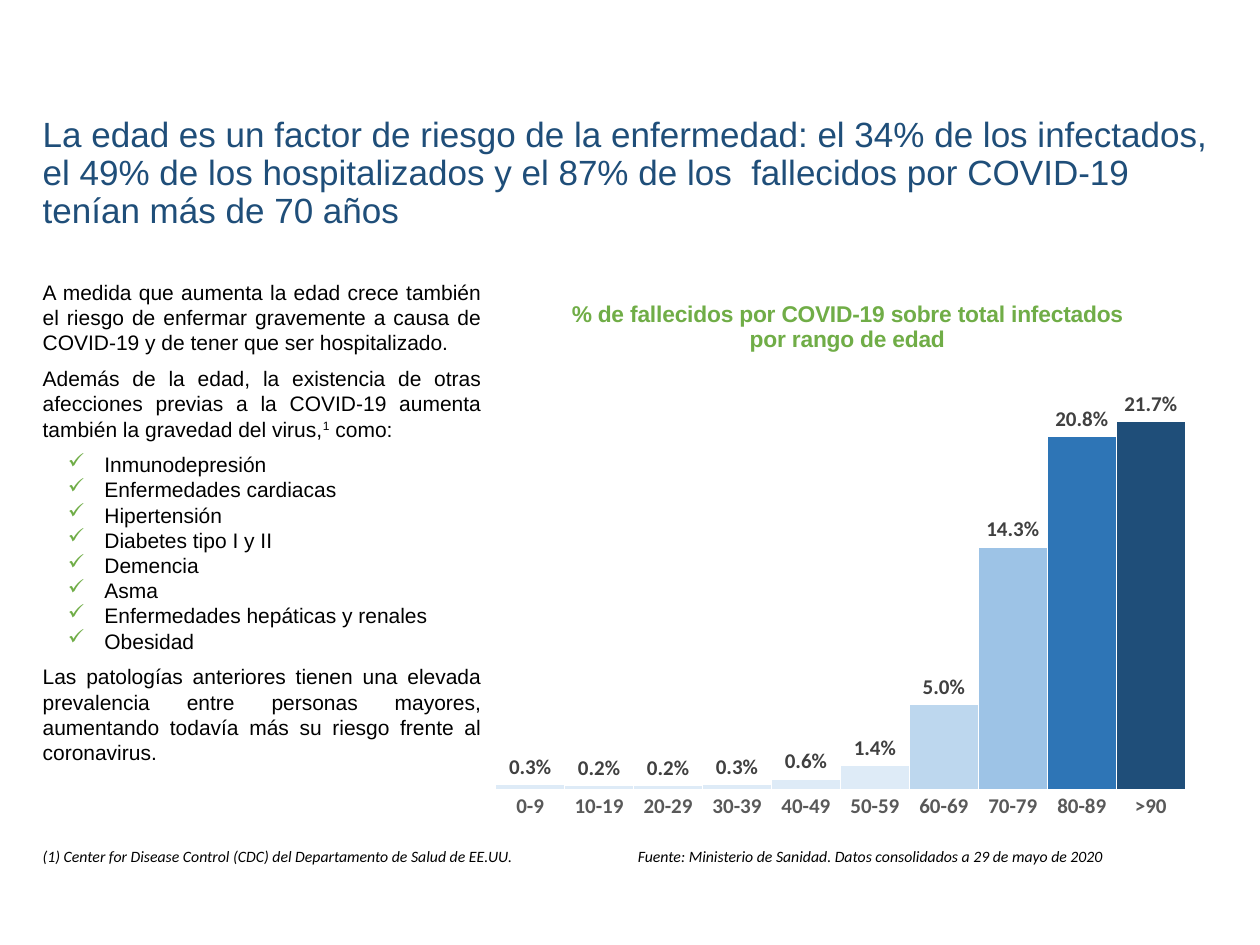
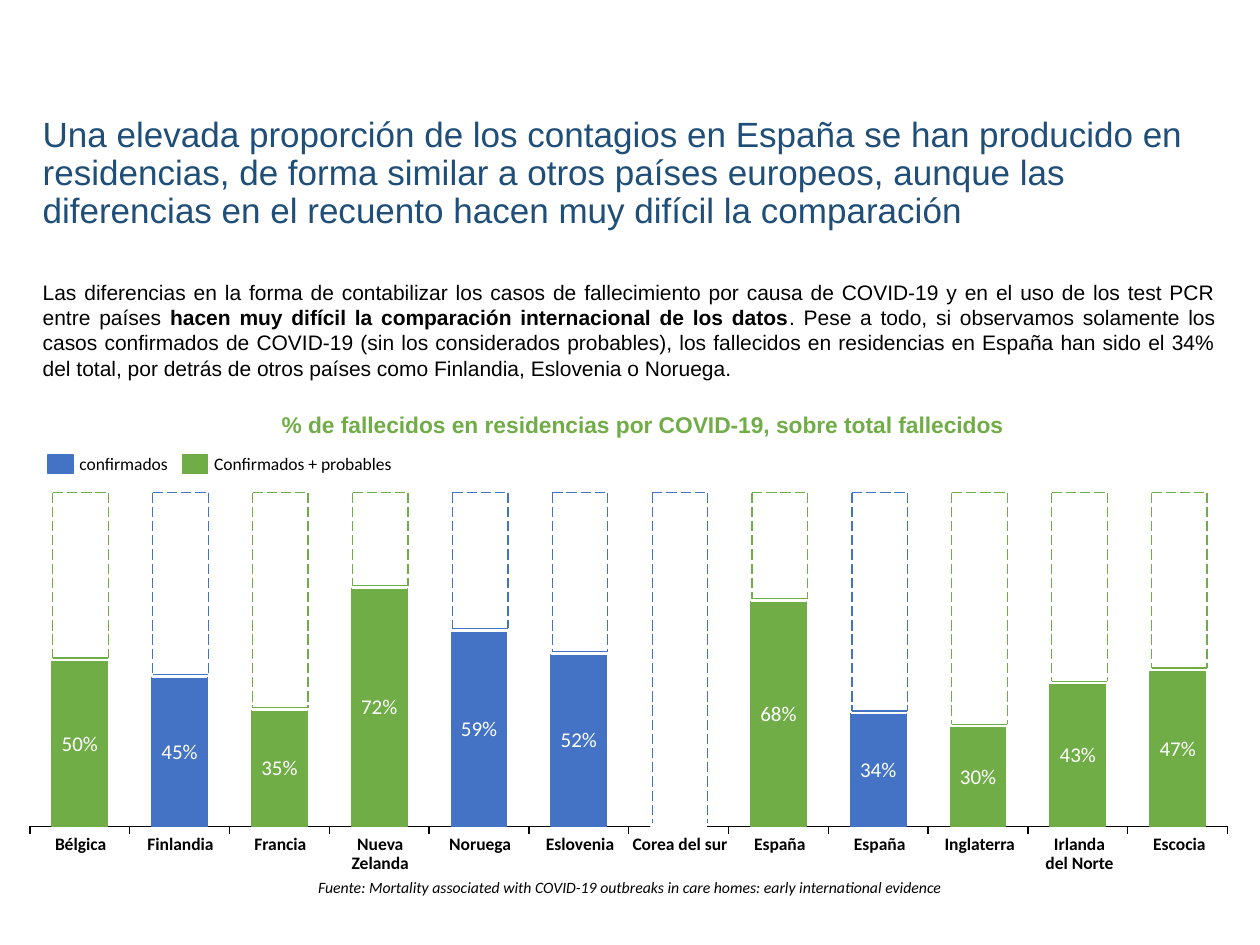
from lxml.etree import SubElement
from pptx import Presentation
from pptx.chart.data import CategoryChartData
from pptx.dml.color import RGBColor
from pptx.enum.chart import XL_CHART_TYPE as ChartType
from pptx.enum.chart import XL_LABEL_POSITION as LabelPosition
from pptx.enum.chart import XL_TICK_LABEL_POSITION as TickLabels
from pptx.enum.chart import XL_TICK_MARK as TickMark
from pptx.enum.dml import MSO_LINE as LineDash
from pptx.enum.shapes import MSO_CONNECTOR as Connector
from pptx.enum.shapes import MSO_SHAPE as Preset
from pptx.enum.text import MSO_ANCHOR as Anchor
from pptx.enum.text import PP_ALIGN as Align
from pptx.oxml import parse_xml
from pptx.oxml.ns import nsdecls, qn
from pptx.util import Pt

BLACK = RGBColor(0x00, 0x00, 0x00)
WHITE = RGBColor(0xFF, 0xFF, 0xFF)
GREEN = RGBColor(0x70, 0xAD, 0x47)
BLUE = RGBColor(0x44, 0x72, 0xC4)
NAVY = RGBColor(0x1F, 0x4E, 0x79)
MID_BLUE = RGBColor(0x2E, 0x75, 0xB6)
SKY = RGBColor(0x9D, 0xC3, 0xE6)
PALE_SKY = RGBColor(0xBD, 0xD7, 0xEE)
ICE = RGBColor(0xDE, 0xEB, 0xF7)
LABEL_GRAY = RGBColor(0x40, 0x40, 0x40)
AXIS_GRAY = RGBColor(0x59, 0x59, 0x59)
RULE_GRAY = RGBColor(0xD9, 0xD9, 0xD9)

TITLE = {"name": "Arial", "size": Pt(20), "color": NAVY}
BODY = {"name": "Arial", "size": Pt(12), "color": BLACK}
HEADING = {"name": "Arial", "size": Pt(13), "bold": True, "color": GREEN}
SOURCE = {"name": "Calibri", "size": Pt(9), "italic": True, "color": BLACK}
LEGEND = {"name": "Calibri", "size": Pt(10), "color": BLACK}
COUNTRY = {**LEGEND, "bold": True}
AGE_VALUE = {"name": "Calibri", "size": Pt(12), "bold": True, "color": LABEL_GRAY}
AGE_RANGE = {**AGE_VALUE, "color": AXIS_GRAY}
CARE_VALUE = {"name": "Calibri", "size": Pt(12), "color": WHITE}
TIGHT = {"line_spacing": 0.9}
CENTERED = {"alignment": Align.CENTER}
JUSTIFIED = {"alignment": Align.JUSTIFY, "space_after": Pt(6)}

LEFT, WIDTH = 17.3, 684.7
AGES = ["0-9", "10-19", "20-29", "30-39", "40-49", "50-59", "60-69", "70-79", "80-89", ">90"]
DEATH_RATES = [0.003, 0.002, 0.002, 0.003, 0.006, 0.014, 0.05, 0.143, 0.208, 0.217]
AGE_COLORS = [ICE] * 6 + [PALE_SKY, SKY, MID_BLUE, NAVY]
CONDITIONS = [
    "Inmunodepresión", "Enfermedades cardiacas", "Hipertensión", "Diabetes tipo I y II",
    "Demencia", "Asma", "Enfermedades hepáticas y renales", "Obesidad",
]
COUNTRIES = [
    ("Bélgica", 50, GREEN), ("Finlandia", 45, BLUE), ("Francia", 35, GREEN),
    ("Nueva Zelanda", 72, GREEN), ("Noruega", 59, BLUE), ("Eslovenia", 52, BLUE),
    ("Corea del sur", None, BLUE), ("España", 68, GREEN), ("España", 34, BLUE),
    ("Inglaterra", 30, GREEN), ("Irlanda del Norte", 43, GREEN), ("Escocia", 47, GREEN),
]
TWO_LINE_NAMES = {"Nueva Zelanda", "Irlanda del Norte"}
COLUMN_LEFT, COLUMN_STEP, COLUMN_WIDTH = 30.2, 57.08, 31.7
FRAME_TOP, FRAME_BASE, FULL_HEIGHT = 281.5, 470.4, 188.6


def set_values(target, values):
    for name, value in values.items():
        if name == "color":
            target.color.rgb = value
        else:
            setattr(target, name, value)


def add_run(paragraph, text, font, superscript=False):
    run = paragraph.add_run()
    run.text = text
    set_values(run.font, font)
    if superscript:
        run._r.get_or_add_rPr().set("baseline", "30000")


def add_check(paragraph):
    properties = paragraph._p.get_or_add_pPr()
    properties.set("lvl", "1")
    properties.set("marL", str(Pt(35.3)))
    properties.set("indent", str(Pt(-20.9)))
    color = SubElement(properties, qn("a:buClr"))
    SubElement(color, qn("a:srgbClr")).set("val", str(GREEN))
    SubElement(properties, qn("a:buChar")).set("char", "✓")


def add_text_frame(slide, left, top, width, height, **frame_format):
    box = slide.shapes.add_textbox(Pt(left), Pt(top), Pt(width), Pt(height))
    set_values(box.text_frame, {"word_wrap": True, **frame_format})
    return box.text_frame


def add_text(slide, area, text, font, paragraph_format, **frame_format):
    frame = add_text_frame(slide, *area, **frame_format)
    paragraph = frame.paragraphs[0]
    set_values(paragraph, paragraph_format)
    add_run(paragraph, text, font)


def add_label(slide, area, text, font, paragraph_format, **frame_format):
    margins = {f"margin_{side}": 0 for side in ("left", "top", "right", "bottom")}
    add_text(slide, area, text, font, paragraph_format, **margins, **frame_format)


def add_title(slide, text):
    area = (LEFT, 41.8, WIDTH, 115.2)
    add_text(slide, area, text, TITLE, TIGHT, vertical_anchor=Anchor.MIDDLE)


def add_line(slide, start, end, color, dashed=True):
    points = [Pt(length) for length in (*start, *end)]
    connector = slide.shapes.add_connector(Connector.STRAIGHT, *points)
    connector.line.color.rgb = color
    connector.line.width = Pt(0.75)
    if dashed:
        connector.line.dash_style = LineDash.LONG_DASH
    SubElement(connector._element.spPr, qn("a:effectLst"))


def add_swatch(slide, left, color):
    shape = slide.shapes.add_shape(Preset.RECTANGLE, Pt(left), Pt(260), Pt(14.4), Pt(10.8))
    shape.shadow.inherit = False
    shape.fill.solid()
    shape.fill.fore_color.rgb = color
    shape.line.color.rgb = color
    shape.line.width = Pt(0.75)


def set_layout(parent, index, target="", **position):
    for layout in parent.findall(qn("c:layout")):
        parent.remove(layout)
    inner = '<c:layoutTarget val="inner"/>' if target else ""
    modes = '<c:xMode val="edge"/><c:yMode val="edge"/>'
    values = "".join(f'<c:{name} val="{value}"/>' for name, value in position.items())
    parent.insert(index, parse_xml(
        f'<c:layout {nsdecls("c")}><c:manualLayout>{inner}{modes}{values}'
        "</c:manualLayout></c:layout>"))


def add_column_chart(slide, area, kind, categories, series_values, maximum, gap, axis_color):
    data = CategoryChartData()
    data.categories = categories
    for number, values in enumerate(series_values, 1):
        data.add_series(f"Series {number}", values)
    chart = slide.shapes.add_chart(kind, *[Pt(length) for length in area], data).chart
    set_values(chart, {"has_legend": False, "has_title": False})
    set_values(chart.font, LEGEND)
    set_values(chart.plots[0], {"vary_by_categories": False, "gap_width": gap})
    set_values(chart.value_axis, {
        "visible": False, "has_major_gridlines": False,
        "minimum_scale": 0, "maximum_scale": maximum})
    axis_line = chart.category_axis.format.line
    axis_line.color.rgb = axis_color
    axis_line.width = Pt(0.75)
    return chart


def color_columns(series, colors, line_colors, line_width):
    for index, (color, line_color) in enumerate(zip(colors, line_colors)):
        point_format = series.points[index].format
        point_format.fill.solid()
        point_format.fill.fore_color.rgb = color
        point_format.line.color.rgb = line_color
        point_format.line.width = Pt(line_width)


def show_values(series, number_format, font, position):
    labels = series.data_labels
    set_values(labels, {
        "show_value": True, "number_format": number_format,
        "number_format_is_linked": False, "position": position})
    set_values(labels.font, font)
    return labels


def add_age_chart(slide):
    chart = add_column_chart(
        slide, (275, 156.2, 411.8, 318.2), ChartType.COLUMN_CLUSTERED,
        AGES, [DEATH_RATES], 0.25, 0, RULE_GRAY)
    paragraph = chart.chart_title.text_frame.paragraphs[0]
    add_run(paragraph, "% de fallecidos por COVID-19 sobre total infectados por rango de edad", HEADING)
    chart.chart_title.include_in_layout = False
    set_layout(chart.chart_title._element, 1, x=0.12, y=0.04)
    set_layout(chart._chartSpace.chart.plotArea, 0, "inner", x=0.02, y=0.166, w=0.957, h=0.761)
    chart.category_axis.major_tick_mark = TickMark.NONE
    set_values(chart.category_axis.tick_labels.font, AGE_RANGE)
    series = chart.plots[0].series[0]
    color_columns(series, AGE_COLORS, [WHITE] * len(AGES), 0)
    show_values(series, "0.0%", AGE_VALUE, LabelPosition.OUTSIDE_END)


def add_care_home_chart(slide):
    shares = [100 if share is None else share for _, share, _ in COUNTRIES]
    colors = [WHITE if share is None else color for _, share, color in COUNTRIES]
    categories = [str(number) for number in range(1, len(COUNTRIES) + 1)]
    chart = add_column_chart(
        slide, (10.8, 277.2, 697.7, 201.6), ChartType.COLUMN_STACKED,
        categories, [shares, [100 - share for share in shares]], 100, 80, BLACK)
    set_layout(chart._chartSpace.chart.plotArea, 0, "inner", x=0.009, y=0.032, w=0.981, h=0.936)
    chart.plots[0].overlap = 100
    set_values(chart.category_axis, {
        "major_tick_mark": TickMark.OUTSIDE, "tick_label_position": TickLabels.NONE})
    share_series, rest_series = chart.plots[0].series
    color_columns(share_series, colors, colors, 0.75)
    rest_series.format.fill.solid()
    rest_series.format.fill.fore_color.rgb = WHITE
    labels = show_values(share_series, '0"%"', CARE_VALUE, LabelPosition.CENTER)
    for index, (_, share, _) in enumerate(COUNTRIES):
        if share is None:
            labels._element.insert(0, parse_xml(
                f'<c:dLbl {nsdecls("c")}><c:idx val="{index}"/><c:delete val="1"/></c:dLbl>'))


def add_country_frame(slide, left, share, color):
    right = left + COLUMN_WIDTH
    bottom = FRAME_BASE - FULL_HEIGHT * (share or 0) / 100
    add_line(slide, (left, FRAME_TOP), (right, FRAME_TOP), color)
    for side in (left, right):
        add_line(slide, (side, FRAME_TOP), (side, bottom), color)
    if share is not None:
        add_line(slide, (left, bottom), (right, bottom), color, dashed=False)


def add_country_name(slide, center, name):
    width = 40.3 if name in TWO_LINE_NAMES else COLUMN_STEP
    area = (center - width / 2, 477.4, width, 21.6)
    add_label(slide, area, name, COUNTRY, {**CENTERED, **TIGHT})


def add_risk_text(slide):
    frame = add_text_frame(slide, LEFT, 156.2, 265, 322.6)
    paragraph = frame.paragraphs[0]
    set_values(paragraph, JUSTIFIED)
    add_run(paragraph, "A medida que aumenta la edad crece también el riesgo de enfermar gravemente "
            "a causa de COVID-19 y de tener que ser hospitalizado.", BODY)
    paragraph = frame.add_paragraph()
    set_values(paragraph, JUSTIFIED)
    add_run(paragraph, "Además de la edad, la existencia de otras afecciones previas a la COVID-19 "
            "aumenta también la gravedad del virus,", BODY)
    add_run(paragraph, "1", BODY, superscript=True)
    add_run(paragraph, " como:", BODY)
    for condition in CONDITIONS:
        paragraph = frame.add_paragraph()
        add_check(paragraph)
        add_run(paragraph, condition, BODY)
    paragraph = frame.add_paragraph()
    set_values(paragraph, {**JUSTIFIED, "space_before": Pt(6)})
    add_run(paragraph, "Las patologías anteriores tienen una elevada prevalencia entre personas "
            "mayores, aumentando todavía más su riesgo frente al coronavirus.", BODY)


def add_comparison_text(slide):
    paragraph = add_text_frame(slide, LEFT, 156.2, WIDTH, 65.5).paragraphs[0]
    set_values(paragraph, JUSTIFIED)
    add_run(paragraph, "Las diferencias en la forma de contabilizar los casos de fallecimiento por "
            "causa de COVID-19 y en el uso de los test PCR entre países ", BODY)
    add_run(paragraph, "hacen muy difícil la comparación internacional de los datos",
            {**BODY, "bold": True})
    add_run(paragraph, ". Pese a todo, si observamos solamente los casos confirmados de COVID-19 "
            "(sin los considerados probables), los fallecidos en residencias en España han sido el "
            "34% del total, por detrás de otros países como Finlandia, Eslovenia o Noruega.", BODY)


def build_age_slide(slide):
    add_title(slide, "La edad es un factor de riesgo de la enfermedad: el 34% de los infectados, el "
              "49% de los hospitalizados y el 87% de los  fallecidos por COVID-19 tenían más de 70 años")
    add_age_chart(slide)
    add_text(slide, (298.8, 480.2, 396.7, 18), "Fuente: Ministerio de Sanidad. Datos consolidados "
             "a 29 de mayo de 2020", SOURCE, CENTERED)
    add_risk_text(slide)
    add_text(slide, (LEFT, 480.2, 342.7, 18), "(1) Center for Disease Control (CDC) del "
             "Departamento de Salud de EE.UU.", SOURCE, {})


def build_care_home_slide(slide):
    add_title(slide, "Una elevada proporción de los contagios en España se han producido en "
              "residencias, de forma similar a otros países europeos, aunque las diferencias en el "
              "recuento hacen muy difícil la comparación")
    add_text(slide, (LEFT, 498.2, WIDTH, 18), "Fuente: Mortality associated with COVID-19 outbreaks "
             "in care homes: early international evidence", SOURCE, CENTERED)
    add_care_home_chart(slide)
    for index, (name, share, color) in enumerate(COUNTRIES):
        left = COLUMN_LEFT + index * COLUMN_STEP
        add_country_frame(slide, left, share, color)
        add_country_name(slide, left + COLUMN_WIDTH / 2, name)
    add_comparison_text(slide)
    add_text(slide, (27.4, 231.1, 679, 23), "% de fallecidos en residencias por COVID-19, sobre "
             "total fallecidos", HEADING, CENTERED)
    for left, color, text, width in ((27.4, BLUE, "confirmados", 50.4),
                                     (104.4, GREEN, "Confirmados + probables", 101.5)):
        add_swatch(slide, left, color)
        add_label(slide, (left + 18, 260, width, 10.8), text, LEGEND, TIGHT,
                  vertical_anchor=Anchor.MIDDLE, word_wrap=False)


def main():
    presentation = Presentation()
    presentation.slide_width, presentation.slide_height = Pt(720), Pt(540)
    for build in (build_age_slide, build_care_home_slide):
        build(presentation.slides.add_slide(presentation.slide_layouts[6]))
    presentation.save("out.pptx")


if __name__ == "__main__":
    main()
